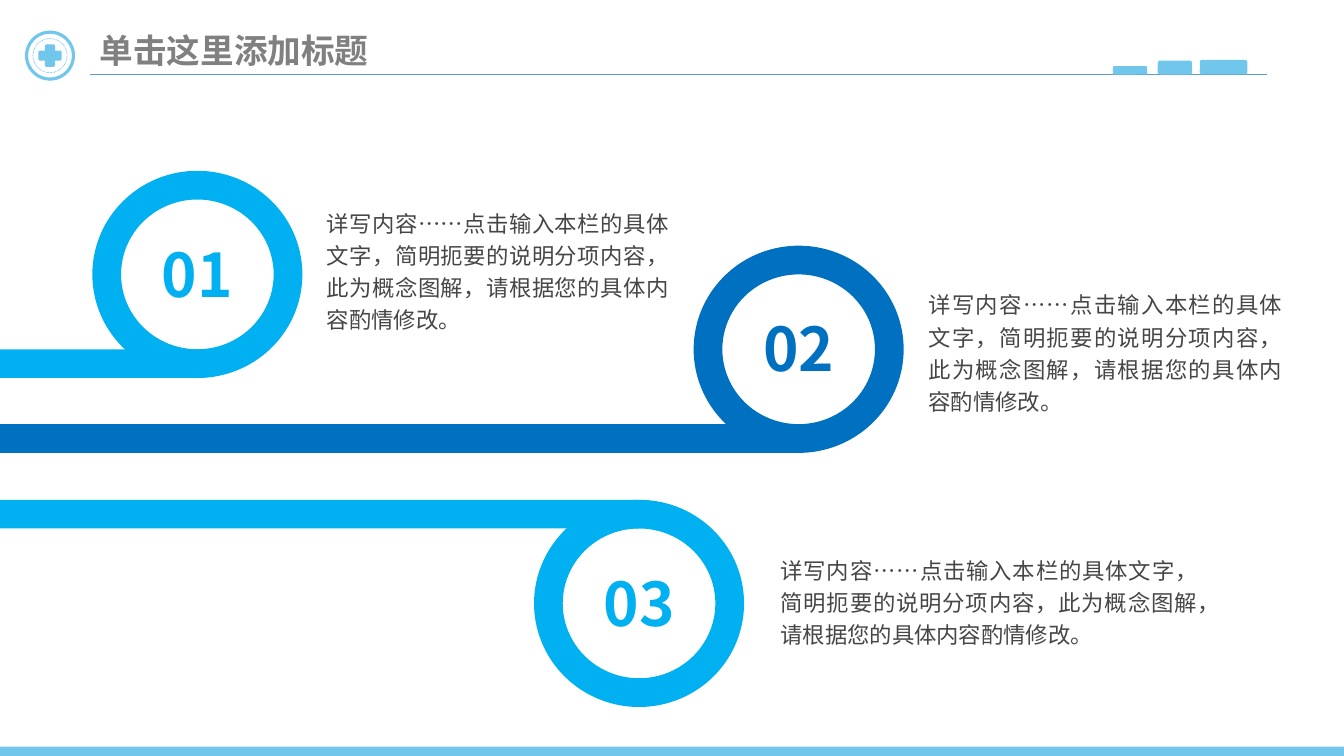
from lxml.etree import SubElement
from pptx import Presentation
from pptx.dml.color import RGBColor
from pptx.enum.dml import MSO_LINE_DASH_STYLE as Dash
from pptx.enum.shapes import MSO_CONNECTOR as Connector, MSO_SHAPE as Shape
from pptx.enum.text import MSO_ANCHOR as Anchor, MSO_AUTO_SIZE as AutoSize, PP_ALIGN as Align
from pptx.oxml.ns import qn
from pptx.util import Pt

FONT = "Noto Sans CJK SC"
PALE_BLUE = RGBColor(0x70, 0xC6, 0xEB)
RULE_BLUE = RGBColor(0x5B, 0x9B, 0xD5)
BRIGHT_BLUE = RGBColor(0x00, 0xB0, 0xF0)
DEEP_BLUE = RGBColor(0x00, 0x70, 0xC0)
TITLE_GREY = RGBColor(0x80, 0x80, 0x80)
TEXT_GREY = RGBColor(0x46, 0x46, 0x46)

SLIDE_WIDTH, SLIDE_HEIGHT = 960, 540
RING_WIDTH, RING_HEIGHT, BAND = 150, 148, 20.5
BODY = "详写内容……点击输入本栏的具体文字，简明扼要的说明分项内容，此为概念图解，请根据您的具体内容酌情修改。"
ITEMS = [
    ("01", BRIGHT_BLUE, (66, 122), False, (224, 141, 263.5, 103)),
    ("02", DEEP_BLUE, (495.5, 175.5), False, (653.75, 199.5, 272, 103)),
    ("03", BRIGHT_BLUE, (381.5, 357), True, (548, 389, 317.5, 79)),
]


def add_plain_shape(shapes, kind, box, fill=None):
    shape = shapes.add_shape(kind, *map(Pt, box))
    shape.shadow.inherit = False
    shape.line.fill.background()
    if fill is None:
        shape.fill.background()
    else:
        shape.fill.solid()
        shape.fill.fore_color.rgb = fill
    return shape


def write_text(frame, text, size, color, align, bold=False):
    paragraph = frame.paragraphs[0]
    paragraph.text = text
    paragraph.alignment = align
    font = paragraph.font
    font.name, font.size, font.bold = FONT, Pt(size), bold
    font.color.rgb = color
    properties = paragraph._p.pPr.find(qn("a:defRPr"))
    SubElement(properties, qn("a:ea")).set("typeface", FONT)
    return paragraph


def set_margins(frame, horizontal, vertical):
    frame.margin_left = frame.margin_right = Pt(horizontal)
    frame.margin_top = frame.margin_bottom = Pt(vertical)


def add_badge(slide, left, top, size):
    badge = slide.shapes.add_group_shape()
    center_x, center_y = left + size / 2, top + size / 2
    for diameter, weight, dash in ((size, 2.25, None), (24.5, 0.5, Dash.ROUND_DOT)):
        box = (center_x - diameter / 2, center_y - diameter / 2, diameter, diameter)
        ring = add_plain_shape(badge.shapes, Shape.OVAL, box)
        ring.line.color.rgb = PALE_BLUE
        ring.line.width = Pt(weight)
        if dash:
            ring.line.dash_style = dash
    for width, height in ((7.2, 16), (16.5, 7.2)):
        box = (center_x - width / 2, center_y - height / 2, width, height)
        add_plain_shape(badge.shapes, Shape.ROUNDED_RECTANGLE, box, PALE_BLUE)


def add_header(slide, left, top, width, height):
    title = slide.shapes.title
    title.left, title.top, title.width, title.height = map(Pt, (left, top, 208, 36))
    frame = title.text_frame
    frame.word_wrap = False
    frame.auto_size = AutoSize.SHAPE_TO_FIT_TEXT
    frame.vertical_anchor = Anchor.TOP
    set_margins(frame, 7.2, 3.6)
    write_text(frame, "单击这里添加标题", 24, TITLE_GREY, Align.LEFT, True)

    add_badge(slide, left - 45, top + 5, 33.5)
    bottom = top + height
    rule = slide.shapes.add_connector(
        Connector.STRAIGHT, Pt(left), Pt(bottom), Pt(left + width), Pt(bottom))
    rule.line.color.rgb = RULE_BLUE
    rule.line.width = Pt(0.5)
    SubElement(rule._element.spPr, qn("a:effectLst"))
    for offset, block_width, block_height in ((731, 24.5, 6), (763, 24.5, 10), (793, 34, 10.5)):
        box = (left + offset, bottom - block_height + 0.25, block_width, block_height)
        add_plain_shape(slide.shapes, Shape.ROUNDED_RECTANGLE, box, PALE_BLUE)


def add_loop(slide, left, top, number, color, bar_on_top):
    hole = add_plain_shape(slide.shapes, Shape.OVAL, (
        left + BAND, top + BAND - 1, RING_WIDTH - 2 * BAND, RING_HEIGHT - 2 * BAND))
    frame = hole.text_frame
    frame.vertical_anchor = Anchor.MIDDLE
    set_margins(frame, 9.5, 5)
    write_text(frame, number, 43, color, Align.CENTER, True)

    bar_top = top if bar_on_top else top + RING_HEIGHT - BAND
    add_plain_shape(slide.shapes, Shape.RECTANGLE, (0, bar_top, left + RING_WIDTH / 2, BAND), color)
    ring = add_plain_shape(slide.shapes, Shape.DONUT, (left, top, RING_WIDTH, RING_HEIGHT), color)
    ring.adjustments[0] = BAND / RING_HEIGHT


def add_description(slide, left, top, width, height):
    frame = slide.shapes.add_textbox(*map(Pt, (left, top, width, height))).text_frame
    frame.word_wrap = True
    frame.auto_size = AutoSize.SHAPE_TO_FIT_TEXT
    set_margins(frame, 9.5, 5)
    write_text(frame, BODY, 16, TEXT_GREY, Align.JUSTIFY).line_spacing = 1.2


def main():
    presentation = Presentation()
    presentation.slide_width, presentation.slide_height = Pt(SLIDE_WIDTH), Pt(SLIDE_HEIGHT)
    slide = presentation.slides.add_slide(presentation.slide_layouts[5])
    add_header(slide, 64, 18, 841, 35)
    add_plain_shape(slide.shapes, Shape.RECTANGLE, (0, SLIDE_HEIGHT - 6.75, SLIDE_WIDTH, 6.75), PALE_BLUE)
    for number, color, (left, top), bar_on_top, text_box in ITEMS:
        add_loop(slide, left, top, number, color, bar_on_top)
        add_description(slide, *text_box)
    presentation.save("out.pptx")


if __name__ == "__main__":
    main()
